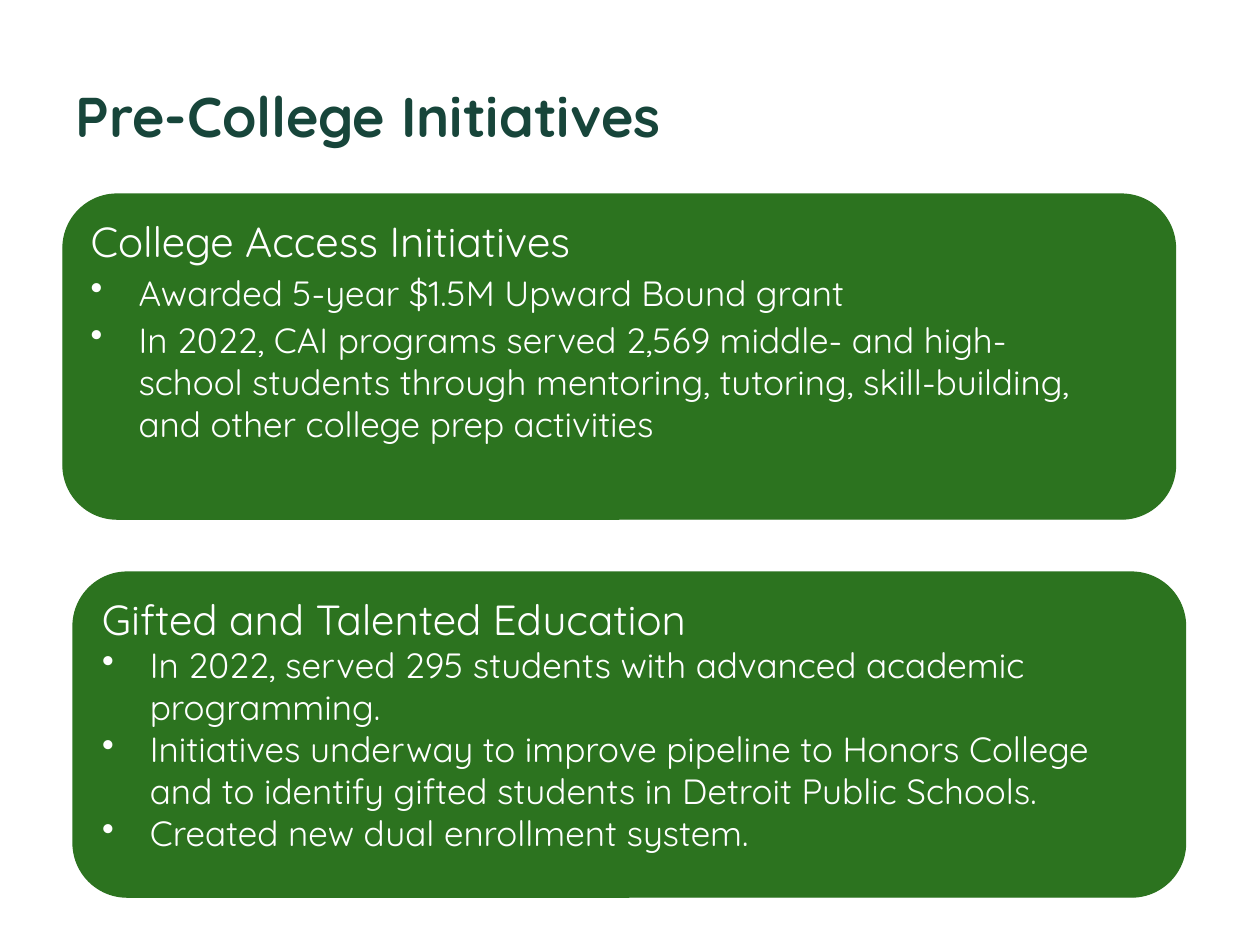
from dataclasses import dataclass

from lxml import etree
from pptx import Presentation
from pptx.dml.color import RGBColor
from pptx.enum.shapes import MSO_SHAPE
from pptx.oxml.ns import qn
from pptx.util import Inches, Pt

ROUNDED = MSO_SHAPE.ROUNDED_RECTANGLE
FONT = "Quicksand"
DARK_GREEN = RGBColor(0x17, 0x45, 0x3A)
PANEL_GREEN = RGBColor(0x2C, 0x73, 0x1F)
WHITE = RGBColor(0xFF, 0xFF, 0xFF)
PANEL_WIDTH, PANEL_HEIGHT, CORNER_RADIUS = 8.83, 2.58, 0.43


@dataclass
class Panel:
    left: float
    top: float
    text_box: tuple[float, float, float, float]
    top_inset: float
    bullet_gap: float
    heading: str
    bullets: list[str]


PANELS = [
    Panel(0.5, 1.54, (0.71, 1.65, 8.0, 1.9), 0.06, 3, "College Access Initiatives", [
        "Awarded 5-year $1.5M Upward Bound grant",
        "In 2022, CAI programs served 2,569 middle- and high-school students "
        "through mentoring, tutoring, skill-building, and other college prep activities",
    ]),
    Panel(0.58, 4.54, (0.8, 4.7, 8.24, 2.1), 0.01, 0, "Gifted and Talented Education", [
        "In 2022, served 295 students with advanced academic programming.",
        "Initiatives underway to improve pipeline to Honors College and to identify "
        "gifted students in Detroit Public Schools.",
        "Created new dual enrollment system.",
    ]),
]


def add_text_frame(slide, box: tuple[float, float, float, float], top_inset: float):
    text_frame = slide.shapes.add_textbox(*map(Inches, box)).text_frame
    text_frame.word_wrap = True
    text_frame.margin_left = text_frame.margin_right = text_frame.margin_bottom = 0
    text_frame.margin_top = Inches(top_inset)
    return text_frame


def write(paragraph, text: str, size: float, color: RGBColor, bold: bool = False,
          indent: float = 0.01) -> None:
    paragraph._p.get_or_add_pPr().set("marL", str(Inches(indent)))
    paragraph.text = text
    font = paragraph.runs[0].font
    font.name, font.size, font.bold = FONT, Pt(size), bold
    font.color.rgb = color


def add_bullet(paragraph, hanging: float) -> None:
    properties = paragraph._p.get_or_add_pPr()
    properties.set("indent", str(-Inches(hanging)))
    etree.SubElement(properties, qn("a:buChar")).set("char", "•")


def draw_panel(slide, panel: Panel) -> None:
    # Rounded background
    shape = slide.shapes.add_shape(
        ROUNDED, Inches(panel.left), Inches(panel.top),
        Inches(PANEL_WIDTH), Inches(PANEL_HEIGHT))
    shape.adjustments[0] = CORNER_RADIUS / PANEL_HEIGHT
    shape.shadow.inherit = False
    shape.fill.solid()
    shape.fill.fore_color.rgb = PANEL_GREEN
    shape.line.color.rgb = PANEL_GREEN
    shape.line.width = Pt(0.75)

    # Heading and bullets
    text_frame = add_text_frame(slide, panel.text_box, panel.top_inset)
    write(text_frame.paragraphs[0], panel.heading, 24, WHITE)
    for bullet in panel.bullets:
        paragraph = text_frame.add_paragraph()
        add_bullet(paragraph, 0.38)
        paragraph.space_before = Pt(panel.bullet_gap)
        write(paragraph, bullet, 20, WHITE, indent=0.39)


def main() -> None:
    presentation = Presentation()
    presentation.slide_width, presentation.slide_height = Inches(10), Inches(7.5)
    slide = presentation.slides.add_slide(presentation.slide_layouts[6])

    # Title
    title = add_text_frame(slide, (0.59, 0.64, 4.73, 0.56), 0.01)
    write(title.paragraphs[0], "Pre-College Initiatives", 32, DARK_GREEN, bold=True)

    for panel in PANELS:
        draw_panel(slide, panel)
    presentation.save("out.pptx")


if __name__ == "__main__":
    main()
